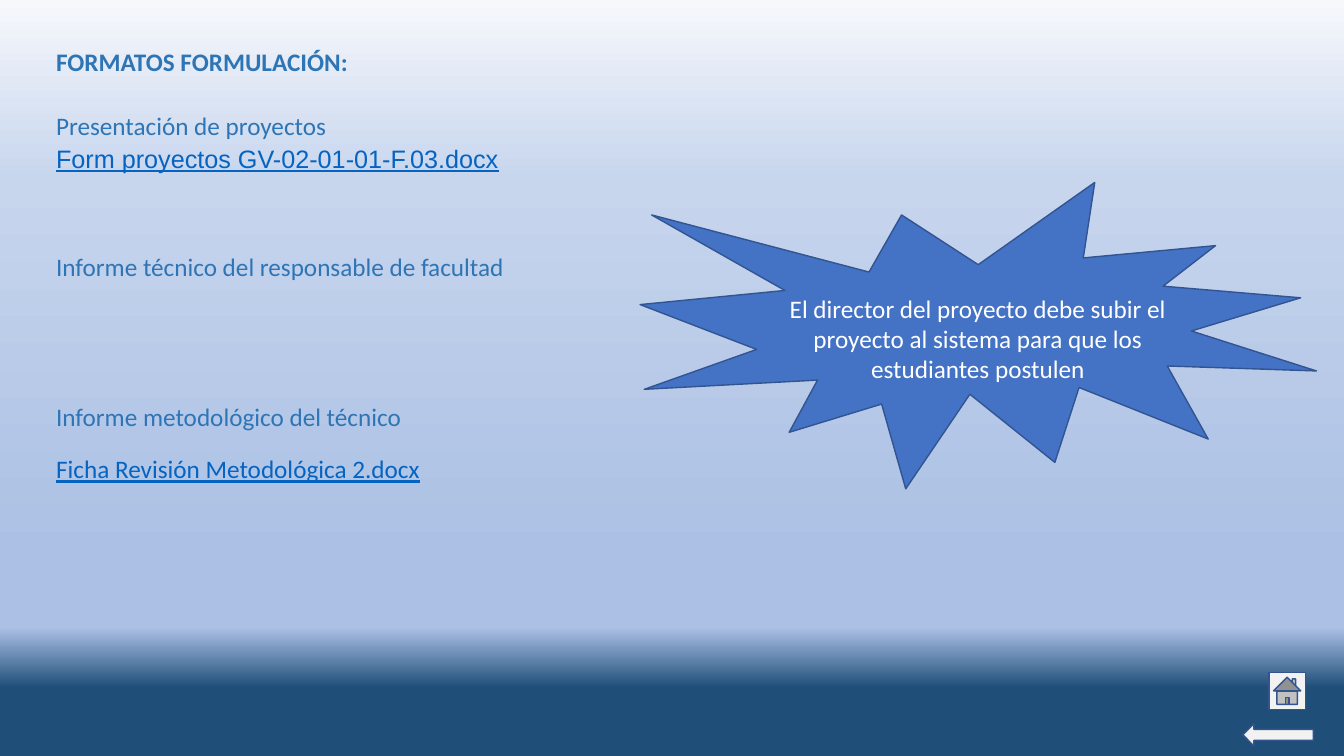
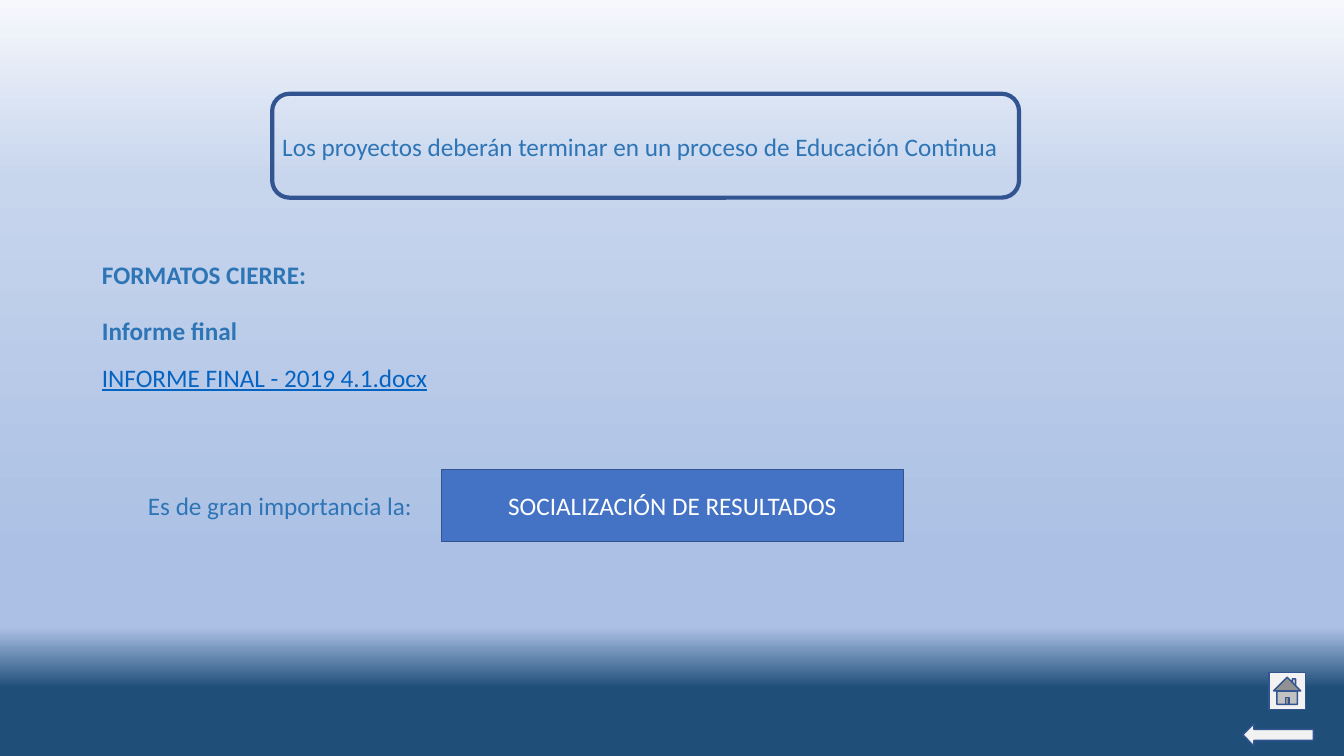
"""Build two slides on the project forms for formulation and closing."""
from lxml import etree
from pptx import Presentation
from pptx import util as u
from pptx.dml.color import RGBColor
from pptx.enum import shapes, text
from pptx.oxml.ns import qn

WHITE = RGBColor(0xFF, 0xFF, 0xFF)
PALE = RGBColor(0xF2, 0xF2, 0xF2)
BLUE = RGBColor(0x44, 0x72, 0xC4)
EDGE = RGBColor(0x32, 0x54, 0x91)
INK = RGBColor(0x2E, 0x75, 0xB6)
LINK = RGBColor(0x05, 0x63, 0xC1)
GRADIENT = [(0, "F6F8FC"), (24, "C7D5ED"), (74, "ABC0E4"), (83, "ABC0E4"), (91, "1F4E79")]

BODY = {"name": "Calibri", "size": u.Pt(18), "color": INK}
BOLD = {**BODY, "bold": True}
FILE = {**BODY, "color": LINK, "underline": True}
LIGHT = {**BODY, "color": WHITE}
LOOSE = {"line_spacing": 1.07}
CENTER = {"alignment": text.PP_ALIGN.CENTER}
SHAPE = shapes.MSO_SHAPE


class Deck:
    """Hold the shared style and the current slide."""

    def __init__(self):
        """Create the presentation and its gradient background."""
        self.prs = Presentation()
        self.prs.slide_width, self.prs.slide_height = u.Pt(960), u.Pt(540)
        master = self.prs.slide_master
        fill = master.background.fill
        fill.gradient()
        fill.gradient_angle = 270
        stops = master.element.find(".//" + qn("a:gsLst"))
        for gs in list(stops):
            stops.remove(gs)
        for pos, color in GRADIENT:
            gs = etree.SubElement(stops, qn("a:gs"), pos=str(pos * 1000))
            etree.SubElement(gs, qn("a:srgbClr"), val=color)

    def slide(self):
        """Add a blank slide with the navigation buttons."""
        self.s = self.prs.slides.add_slide(self.prs.slide_layouts[6])
        self.shape(SHAPE.LEFT_ARROW, 887.8, 517, 50.4, 15.8, PALE)
        self.shape(SHAPE.ACTION_BUTTON_HOME, 906.5, 480.2, 25.9, 26.6, PALE)

    def paragraphs(self, tf, lines, para):
        """Put (wording, font, paragraph format) lines into a text frame."""
        tf.word_wrap = True
        for i, (words, font, extra) in enumerate(lines):
            p = tf.add_paragraph() if i else tf.paragraphs[0]
            for key, value in {**para, **extra}.items():
                setattr(p, key, value)
            r = p.add_run()
            r.text = words
            for key, value in font.items():
                if key == "color":
                    r.font.color.rgb = value
                else:
                    setattr(r.font, key, value)

    def text(self, x, y, w, h, lines, para=LOOSE):
        """Add a text box that grows with its text."""
        tf = self.s.shapes.add_textbox(*map(u.Pt, (x, y, w, h))).text_frame
        self.paragraphs(tf, lines, para)
        tf.auto_size = text.MSO_AUTO_SIZE.SHAPE_TO_FIT_TEXT

    def shape(self, kind, x, y, w, h, fill=None, line=1, lines=(), para=CENTER):
        """Add an outlined preset shape, filled when a colour is given."""
        sp = self.s.shapes.add_shape(kind, *map(u.Pt, (x, y, w, h)))
        sp.shadow.inherit = False
        if fill is None:
            sp.fill.background()
        else:
            sp.fill.solid()
            sp.fill.fore_color.rgb = fill
        sp.line.color.rgb = EDGE
        sp.line.width = u.Pt(line)
        tf = sp.text_frame
        tf.vertical_anchor = text.MSO_ANCHOR.MIDDLE
        tf.margin_left = tf.margin_right = u.Pt(3.6)
        self.paragraphs(tf, lines, para)


def formulation(d):
    """Build the slide of formulation forms."""
    d.slide()
    d.shape(SHAPE.EXPLOSION1, 457.2, 130.3, 483.1, 218.9, BLUE)
    d.text(529.9, 205.9, 337, 76.3, [
        ("El director del proyecto debe subir el proyecto al sistema "
         "para que los estudiantes postulen", LIGHT, {})], CENTER)
    d.text(33, 28, 862, 99.4, [
        ("FORMATOS FORMULACIÓN:", BOLD, {}),
        ("Presentación de proyectos", BODY, {"space_before": u.Pt(23)}),
        ("Form proyectos GV-02-01-01-F.03.docx", {**FILE, "name": "Arial"}, {})])
    d.text(33, 174.2, 348.5, 29.5, [("Informe técnico del responsable de facultad", BODY, {})])
    d.text(33, 281.5, 293, 29.5, [("Informe metodológico del técnico", BODY, {})])
    d.text(33, 320.4, 315.4, 28.8, [("Ficha Revisión Metodológica 2.docx", FILE, {})], {})


def closing(d):
    """Build the slide of closing forms."""
    d.slide()
    d.shape(SHAPE.FLOWCHART_ALTERNATE_PROCESS, 194.4, 67, 533.5, 74.2, line=3, lines=[
        ("Los proyectos deberán terminar en un proceso de Educación Continua", BODY, {})],
        para={**LOOSE, "alignment": text.PP_ALIGN.JUSTIFY})
    d.text(65.7, 181.4, 480, 28.8, [("FORMATOS CIERRE:", BOLD, {})], {})
    d.text(65.7, 220.3, 480, 29.5, [("Informe final", BOLD, {})])
    d.text(65.7, 255.2, 304.6, 28.8, [("INFORME FINAL - 2019 4.1.docx", FILE, {})], {})
    d.text(98.6, 347, 262, 28.8, [("Es de gran importancia la:", BODY, {})], {})
    d.shape(SHAPE.RECTANGLE, 315.4, 335.5, 329.8, 51.1, BLUE,
            lines=[("SOCIALIZACIÓN DE RESULTADOS", LIGHT, {})])


def main():
    """Build and save the deck."""
    d = Deck()
    formulation(d)
    closing(d)
    d.prs.save("out.pptx")


if __name__ == "__main__":
    main()
